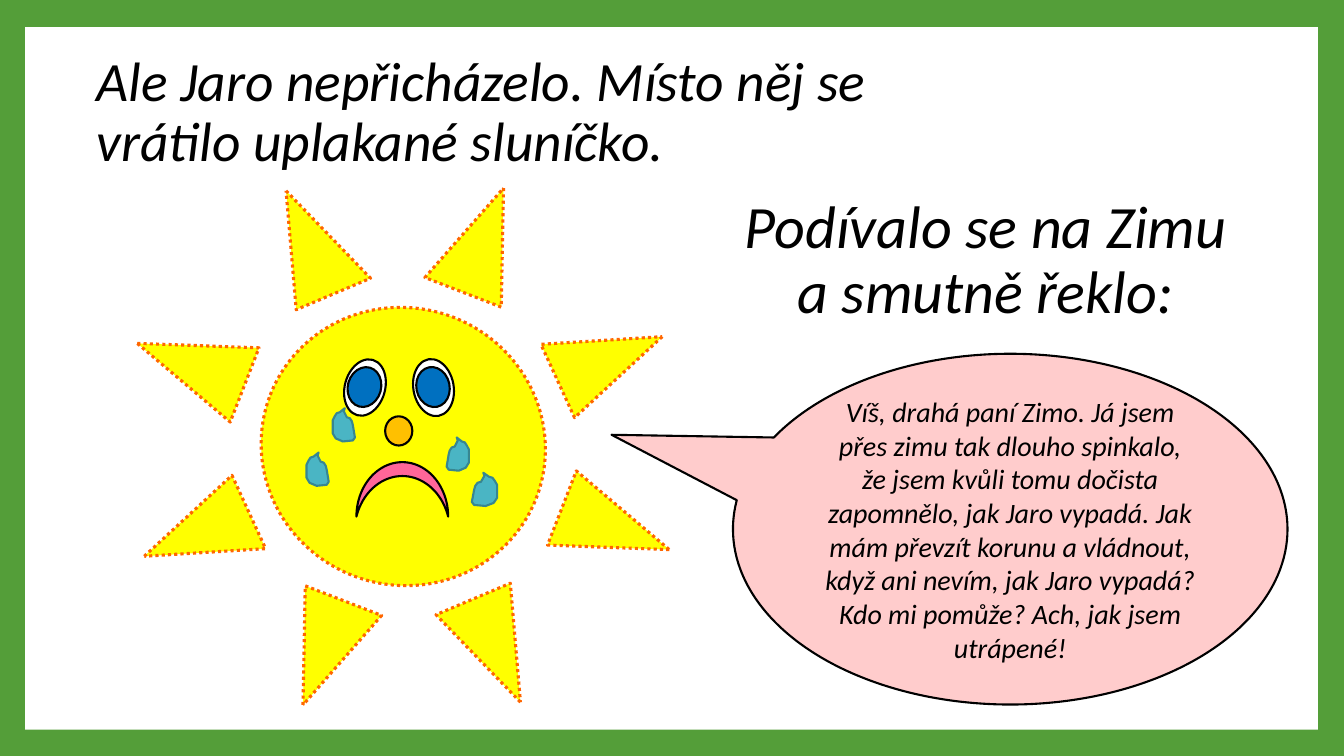
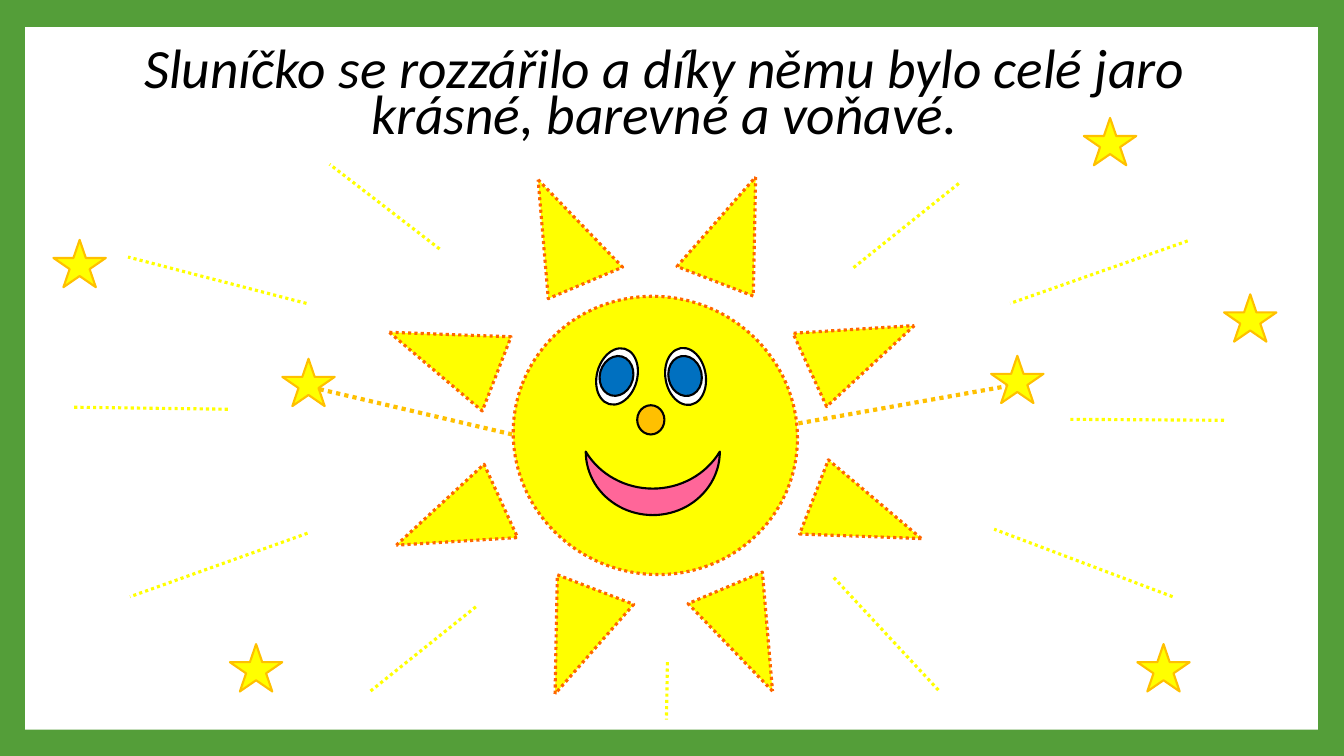
import pptx
import pptx.util
import pptx.dml.color
import pptx.enum.dml
import pptx.enum.shapes
import pptx.enum.text
from pptx.oxml.ns import qn
from lxml import etree

Inches = pptx.util.Inches
Pt = pptx.util.Pt
SHAPE = pptx.enum.shapes.MSO_SHAPE
ALIGN = pptx.enum.text.PP_ALIGN

FONT = "Calibri"
COLORS = {
    "frame": "549E39", "paper": "FFFFFF", "ink": "000000",
    "sun": "FFFF00", "flame": "FF6600", "gold": "FFC000",
    "iris": "0070C0", "lips": "FF6699", "bubble": "FFCCCC",
    "tear": "4AB5C4", "tear_edge": "378691",
}

# Outline of a tear, in inches, on a base 0.22 wide
TEAR_WIDTH = 0.22
TEAR = [(0.12, 0), (0.07, 0.04), (0.04, 0.05), (0.02, 0.08), (0, 0.12),
        (0, 0.25), (0.03, 0.3), (0.1, 0.33), (0.2, 0.32), (0.22, 0.29),
        (0.2, 0.17), (0.19, 0.13), (0.17, 0.1), (0.14, 0.09), (0.11, 0.03)]


def color(name):
    return pptx.dml.color.RGBColor.from_string(COLORS[name])


def write_text(frame, text, size=20, align=ALIGN.LEFT, spacing=1.0):
    """Fill a text frame with one italic paragraph."""
    frame.word_wrap = True
    frame.vertical_anchor = pptx.enum.text.MSO_ANCHOR.MIDDLE
    para = frame.paragraphs[0]
    para.alignment = align
    para.line_spacing = spacing
    span = para.add_run()
    span.text = text
    span.font.name = FONT
    span.font.size = Pt(size)
    span.font.italic = True
    span.font.color.rgb = color("ink")


class Storybook:
    """Holds the deck, the current page and the shared style."""

    def __init__(self):
        self.deck = pptx.Presentation()
        self.deck.slide_width = Inches(13.33)
        self.deck.slide_height = Inches(7.5)
        self.page = None
        self.canvas = None

    def new_page(self):
        self.page = self.deck.slides.add_slide(self.deck.slide_layouts[6])
        self.canvas = self.page.shapes
        background = self.page.background.fill
        background.solid()
        background.fore_color.rgb = color("frame")
        self.shape(SHAPE.RECTANGLE, 0.25, 0.27, 12.82, 6.97, "paper", edge=None)

    def start_group(self):
        self.canvas = self.page.shapes.add_group_shape().shapes

    def end_group(self):
        self.canvas = self.page.shapes

    def stroke(self, line, edge, weight, dotted):
        line.color.rgb = color(edge)
        line.width = Pt(weight)
        if dotted:
            line.dash_style = pptx.enum.dml.MSO_LINE.ROUND_DOT

    def paint(self, shape, fill, edge, weight=1.5, dotted=False):
        shape.shadow.inherit = False
        shape.fill.solid()
        shape.fill.fore_color.rgb = color(fill)
        if edge:
            self.stroke(shape.line, edge, weight, dotted)
        else:
            shape.line.fill.background()

    def shape(self, kind, left, top, width, height, fill, edge="ink",
              rotation=0, adjust=(), **stroke):
        shape = self.canvas.add_shape(
            kind, Inches(left), Inches(top), Inches(width), Inches(height))
        shape.rotation = rotation
        for index, value in enumerate(adjust):
            shape.adjustments[index] = value
        self.paint(shape, fill, edge, **stroke)
        return shape

    def text(self, text, left, top, width, height, **style):
        box = self.page.shapes.add_textbox(
            Inches(left), Inches(top), Inches(width), Inches(height))
        write_text(box.text_frame, text, **style)

    def dotted_line(self, x1, y1, x2, y2, edge="sun", weight=2.25):
        line = self.canvas.add_connector(
            pptx.enum.shapes.MSO_CONNECTOR.STRAIGHT,
            Inches(x1), Inches(y1), Inches(x2), Inches(y2))
        self.stroke(line.line, edge, weight, True)
        etree.SubElement(line._element.spPr, qn("a:effectLst"))

    def star(self, left, top):
        self.shape(SHAPE.STAR_5_POINT, left, top, 0.52, 0.47, "sun", "gold")

    def tear(self, left, top, width=TEAR_WIDTH, mirrored=False):
        points = []
        for x, y in TEAR:
            across = TEAR_WIDTH - x if mirrored else x
            points.append((Inches(left + across * width / TEAR_WIDTH),
                           Inches(top + y)))
        outline = self.canvas.build_freeform(*points[0])
        outline.add_line_segments(points[1:], close=True)
        self.paint(outline.convert_to_shape(), "tear", "tear_edge")

    def sun(self, left, top):
        """Draw the sun with eyes and nose; the mouth is added apart."""
        self.shape(SHAPE.SUN, left, top, 5.66, 5.5, "sun", "flame",
                   rotation=21.2, weight=2.25, dotted=True)
        eyes = [(2.25, 15.6, 15.6), (2.93, 349.9, 348.2)]
        for offset, tilt, _ in eyes:
            self.shape(SHAPE.OVAL, left + offset, top + 1.88, 0.4, 0.57,
                       "paper", rotation=tilt)
        for offset, _, tilt in eyes:
            self.shape(SHAPE.OVAL, left + offset + 0.03, top + 1.96, 0.33, 0.4,
                       "iris", rotation=tilt)
        self.shape(SHAPE.OVAL, left + 2.65, top + 2.45, 0.27, 0.29, "gold")

    def mouth(self, left, top, width, height, rotation, curve):
        self.shape(SHAPE.MOON, left, top, width, height, "lips",
                   rotation=rotation, adjust=[curve])


def crying_sun(book):
    book.new_page()
    # Sun with tears
    book.start_group()
    book.sun(1.17, 1.68)
    book.mouth(3.72, 4.4, 0.54, 0.91, rotation=90, curve=0.255)
    book.tear(3.3, 4.05)
    book.tear(4.43, 4.34, mirrored=True)
    book.tear(3.04, 4.49)
    book.tear(4.68, 4.69, width=0.25, mirrored=True)
    book.end_group()
    # Story and speech
    book.text("Ale Jaro nepřicházelo. Místo něj se vrátilo uplakané sluníčko.",
              0.86, 0.58, 8.07, 1.1, size=39.6, spacing=0.9)
    bubble = book.shape(SHAPE.OVAL_CALLOUT, 7.27, 3.51, 5.5, 3.48, "bubble",
                        adjust=[-0.719, -0.269])
    write_text(
        bubble.text_frame,
        "Víš, drahá paní Zimo. Já jsem přes zimu tak dlouho spinkalo, "
        "že jsem kvůli tomu dočista zapomnělo, jak Jaro vypadá. "
        "Jak mám převzít korunu a vládnout, když ani nevím, jak Jaro vypadá? "
        "Kdo mi pomůže? Ach, jak jsem utrápené!",
        align=ALIGN.CENTER)
    book.text("Podívalo se na Zimu a smutně řeklo:", 7.19, 1.88, 5.17, 1.43,
              size=42.9, align=ALIGN.CENTER, spacing=0.9)


def shining_sun(book):
    book.new_page()
    book.start_group()
    # Smiling sun
    book.sun(3.67, 1.57)
    book.mouth(6.16, 4.13, 0.63, 1.33, rotation=270, curve=0.417)
    # Arms holding stars
    book.dotted_line(5.08, 4.31, 3.08, 3.84, edge="gold", weight=3)
    book.dotted_line(7.92, 4.2, 10.05, 3.82, edge="gold", weight=3)
    book.star(2.8, 3.56)
    book.star(9.83, 3.53)
    # Rays of light
    rays = [
        (4.72, 6.02, 3.67, 6.86), (9.51, 1.82, 8.46, 2.66),
        (8.27, 5.73, 9.32, 6.86), (4.36, 2.47, 3.27, 1.63),
        (2.26, 4.06, 0.72, 4.04), (12.14, 4.17, 10.6, 4.16),
        (3.04, 3.01, 1.27, 2.55), (11.63, 5.92, 9.86, 5.25),
        (3.05, 5.29, 1.29, 5.92), (11.78, 2.39, 10.02, 3.01),
        (6.62, 6.57, 6.61, 7.14),
    ]
    for ray in rays:
        book.dotted_line(*ray)
    # Scattered stars
    for spot in [(2.28, 6.39), (0.53, 2.38), (10.75, 1.17),
                 (11.28, 6.39), (12.14, 2.92)]:
        book.star(*spot)
    book.end_group()
    # Story
    book.text("Sluníčko se rozzářilo a díky němu bylo celé jaro krásné, "
              "barevné a voňavé.", 0.99, 0.39, 11.2, 1.15,
              size=39.6, align=ALIGN.CENTER, spacing=0.7)


def main():
    book = Storybook()
    crying_sun(book)
    shining_sun(book)
    book.deck.save("out.pptx")


if __name__ == "__main__":
    main()
